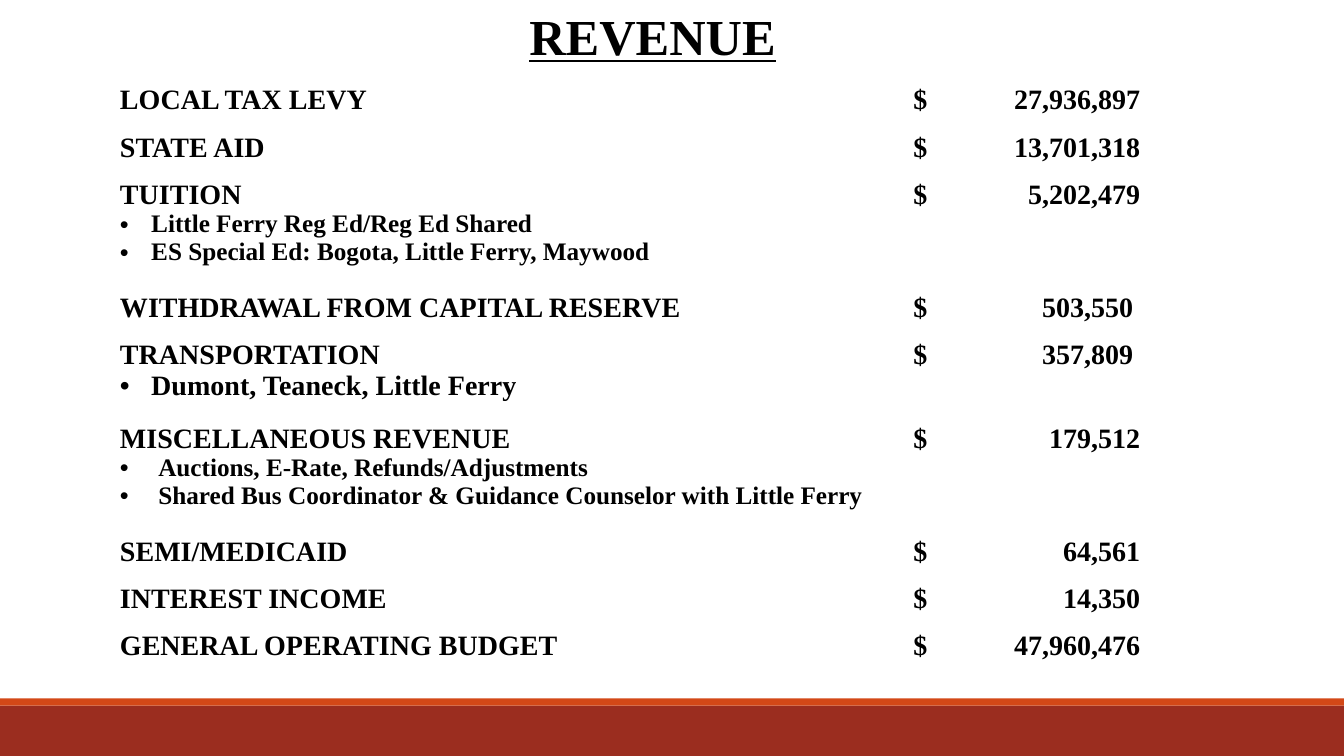
from lxml.etree import SubElement
from pptx import Presentation
from pptx.dml.color import RGBColor
from pptx.enum.shapes import MSO_SHAPE
from pptx.enum.text import MSO_ANCHOR, MSO_AUTO_SIZE, PP_ALIGN
from pptx.oxml.ns import qn
from pptx.util import Inches, Pt

COLORS = {"text": "000000", "band": "9B2D1F", "stripe": "D34817"}
FONT = "Times New Roman"
WIDTH, HEIGHT = 13.33, 7.5
TABLE_LEFT, TABLE_TOP = 1.09, 0.79
COLUMN_WIDTHS = [7.87, 3.53]
ROW_HEIGHTS = [0.47, 0.47, 1.12, 0.47, 0.83, 1.12, 0.47, 0.47, 0.5]
AMOUNT_EDGE, SHORT_AMOUNT_EDGE = 2.25, 2.18

REVENUE = [
    ("LOCAL TAX LEVY", "27,936,897", AMOUNT_EDGE, [], 18, 0),
    ("STATE AID", "13,701,318", AMOUNT_EDGE, [], 18, 0),
    ("TUITION", "5,202,479", AMOUNT_EDGE,
     ["Little Ferry Reg Ed/Reg Ed Shared",
      "ES Special Ed: Bogota, Little Ferry, Maywood"], 18, 0.31),
    ("WITHDRAWAL FROM CAPITAL RESERVE", "503,550", SHORT_AMOUNT_EDGE, [], 18, 0),
    ("TRANSPORTATION", "357,809", SHORT_AMOUNT_EDGE,
     ["Dumont, Teaneck, Little Ferry"], 20, 0.31),
    ("MISCELLANEOUS REVENUE", "179,512", AMOUNT_EDGE,
     ["Auctions, E-Rate, Refunds/Adjustments",
      "Shared Bus Coordinator & Guidance Counselor with Little Ferry"], 18, 0.38),
    ("SEMI/MEDICAID", "64,561", AMOUNT_EDGE, [], 18, 0),
    ("INTEREST INCOME", "14,350", AMOUNT_EDGE, [], 18, 0),
    ("GENERAL OPERATING BUDGET", "47,960,476", AMOUNT_EDGE, [], 18, 0),
]


def write(paragraph, text, size=20, underline=False, indent=0, tab=0):
    paragraph.alignment = PP_ALIGN.LEFT
    run = paragraph.add_run()
    run.text = text
    font = run.font
    font.name, font.size, font.bold = FONT, Pt(size), True
    font.underline = underline
    font.color.rgb = RGBColor.from_string(COLORS["text"])
    properties = paragraph._p.get_or_add_pPr()
    if indent:
        properties.set("marL", str(Inches(indent)))
        properties.set("indent", str(-Inches(indent)))
        SubElement(properties, qn("a:buFont"), typeface="Arial")
        SubElement(properties, qn("a:buChar"), char="•")
    if tab:
        tabs = SubElement(properties, qn("a:tabLst"))
        SubElement(tabs, qn("a:tab"), pos=str(Inches(tab)), algn="r")


presentation = Presentation()
presentation.slide_width = Inches(WIDTH)
presentation.slide_height = Inches(HEIGHT)
slide = presentation.slides.add_slide(presentation.slide_layouts[5])

for name, top, height in [("band", 7, 0.5), ("stripe", 6.93, 0.07)]:
    shape = slide.shapes.add_shape(
        MSO_SHAPE.RECTANGLE, 0, Inches(top), Inches(WIDTH), Inches(height))
    shape.shadow.inherit = False
    shape.fill.solid()
    shape.fill.fore_color.rgb = RGBColor.from_string(COLORS[name])
    shape.line.fill.background()

title = slide.shapes.title
title.left, title.top = Inches(5.15), 0
title.width, title.height = Inches(2.67), Inches(0.71)
title_frame = title.text_frame
title_frame.word_wrap = False
title_frame.auto_size = MSO_AUTO_SIZE.SHAPE_TO_FIT_TEXT
title_frame.vertical_anchor = MSO_ANCHOR.TOP
write(title_frame.paragraphs[0], "REVENUE", size=36, underline=True)

table = slide.shapes.add_table(
    len(REVENUE), len(COLUMN_WIDTHS), Inches(TABLE_LEFT), Inches(TABLE_TOP),
    Inches(sum(COLUMN_WIDTHS)), Inches(sum(ROW_HEIGHTS))).table
table.first_row = False
table.horz_banding = False
for column, width in zip(table.columns, COLUMN_WIDTHS):
    column.width = Inches(width)

for row, height, entry in zip(table.rows, ROW_HEIGHTS, REVENUE):
    label, amount, edge, details, detail_size, indent = entry
    row.height = Inches(height)
    for cell in row.cells:
        cell.fill.background()
    label_frame, amount_frame = [cell.text_frame for cell in row.cells]
    write(label_frame.paragraphs[0], label)
    for detail in details:
        write(label_frame.add_paragraph(), detail, size=detail_size, indent=indent)
    write(amount_frame.paragraphs[0], f"$\t{amount}", tab=edge)

presentation.save("out.pptx")
